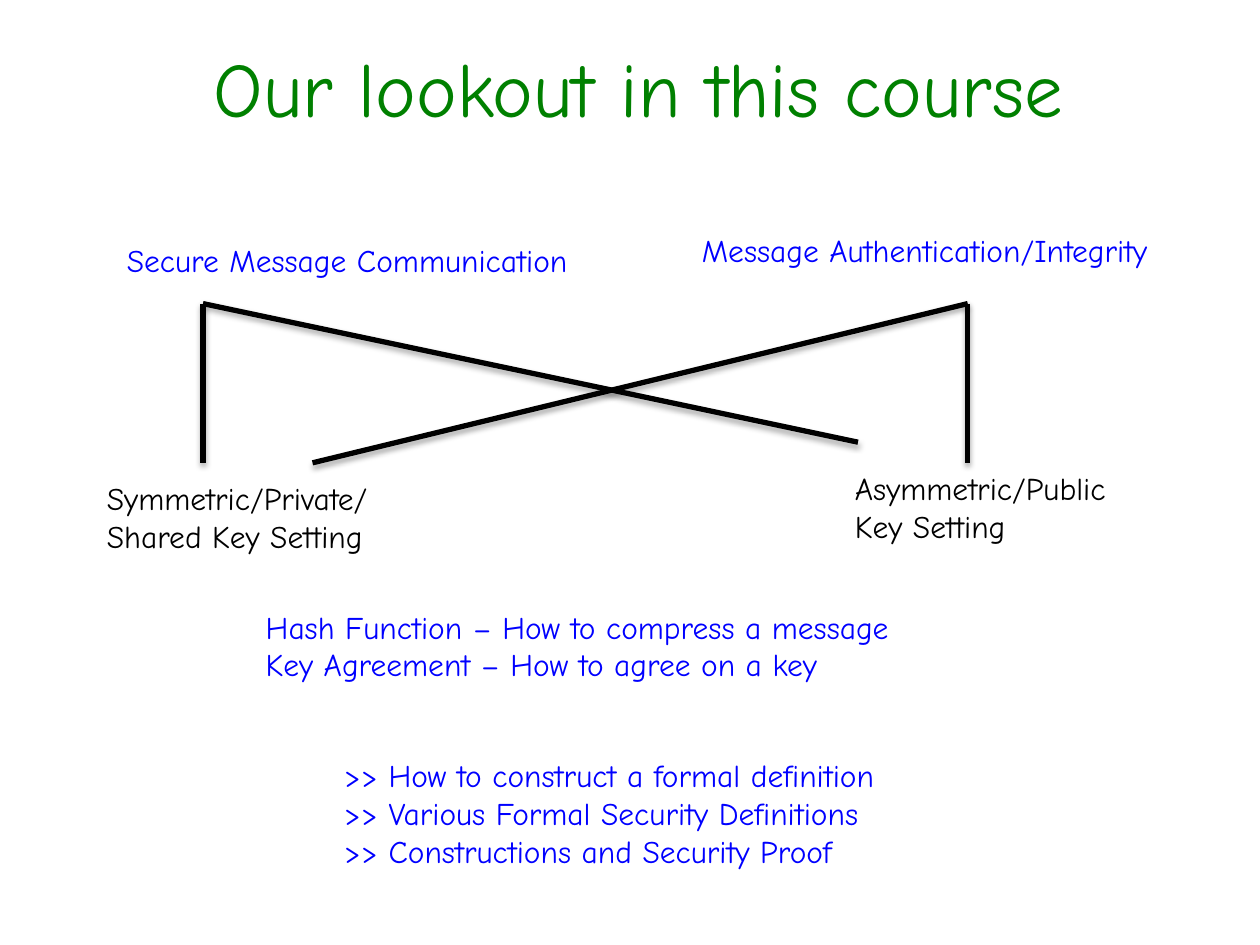
from lxml import etree
from pptx import Presentation
from pptx.dml.color import RGBColor
from pptx.enum.shapes import MSO_CONNECTOR
from pptx.enum.text import MSO_ANCHOR, MSO_AUTO_SIZE, PP_ALIGN
from pptx.util import Pt

STRAIGHT = MSO_CONNECTOR.STRAIGHT
MIDDLE = MSO_ANCHOR.MIDDLE
GROW = MSO_AUTO_SIZE.SHAPE_TO_FIT_TEXT
CENTER = PP_ALIGN.CENTER

THEME = {
    "font": "Comic Neue",
    "title": 44,
    "body": 18,
    "green": RGBColor(0, 128, 0),
    "blue": RGBColor(0, 0, 255),
    "black": RGBColor(0, 0, 0),
}
SHADOW = (
    '<a:effectLst xmlns:a="http://schemas.openxmlformats.org/drawingml/2006/main">'
    '<a:outerShdw blurRad="40000" dist="23000" dir="5400000" rotWithShape="0">'
    '<a:srgbClr val="000000"><a:alpha val="35000"/></a:srgbClr>'
    '</a:outerShdw></a:effectLst>'
)


def style(par, size, color):
    par.font.name = THEME["font"]
    par.font.size = Pt(THEME[size])
    par.font.color.rgb = THEME[color]


deck = Presentation()
deck.slide_width, deck.slide_height = Pt(720), Pt(540)
slide = deck.slides.add_slide(deck.slide_layouts[5])

title = slide.shapes.title
title.left, title.top, title.width, title.height = Pt(41), Pt(4.3), Pt(648), Pt(90)
title.text_frame.text = "Our lookout in this course"
title.text_frame.vertical_anchor = MIDDLE
head = title.text_frame.paragraphs[0]
head.alignment = CENTER
style(head, "title", "green")

labels = [
    (65.4, 133.9, 282, 29, False, "blue", ["Secure Message Communication"]),
    (394, 128.4, 307.5, 29, False, "blue", ["Message Authentication/Integrity"]),
    (54, 270, 185, 51, True, "black", ["Symmetric/Private/Shared Key Setting"]),
    (481.5, 264.5, 185, 51, True, "black", ["Asymmetric/Public Key Setting"]),
    (144.8, 343.7, 388, 51, False, "blue", [
        "Hash Function – How to compress a message",
        "Key Agreement – How to agree on a key",
    ]),
    (189.5, 428.6, 344, 72.7, False, "blue", [
        ">> How to construct a formal definition",
        ">> Various Formal Security Definitions",
        ">> Constructions and Security Proof",
    ]),
]
for left, top, width, height, wrap, color, lines in labels:
    box = slide.shapes.add_textbox(Pt(left), Pt(top), Pt(width), Pt(height))
    frame = box.text_frame
    frame.word_wrap = wrap
    frame.auto_size = GROW
    frame.text = "\n".join(lines)
    for par in frame.paragraphs:
        style(par, "body", color)

west, east, roof, floor = 116, 553, 173.5, 264.5
links = [
    (west, 490.3, 252.7),
    (east, 178.6, floor),
    (west, west, floor),
    (east, east, floor),
]
for start, end, base in links:
    link = slide.shapes.add_connector(STRAIGHT, Pt(start), Pt(roof), Pt(end), Pt(base))
    link.line.color.rgb = THEME["black"]
    link.line.width = Pt(3)
    link._element.spPr.append(etree.fromstring(SHADOW))

deck.save("out.pptx")
